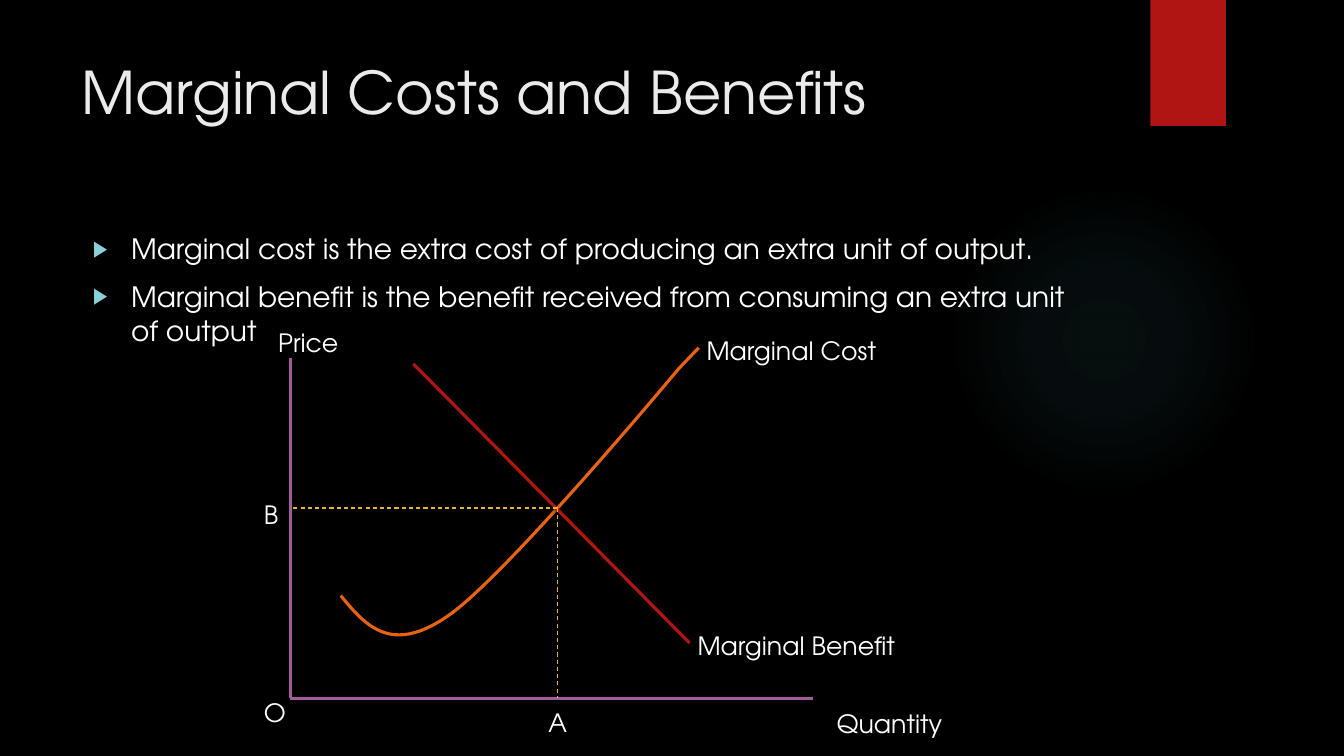
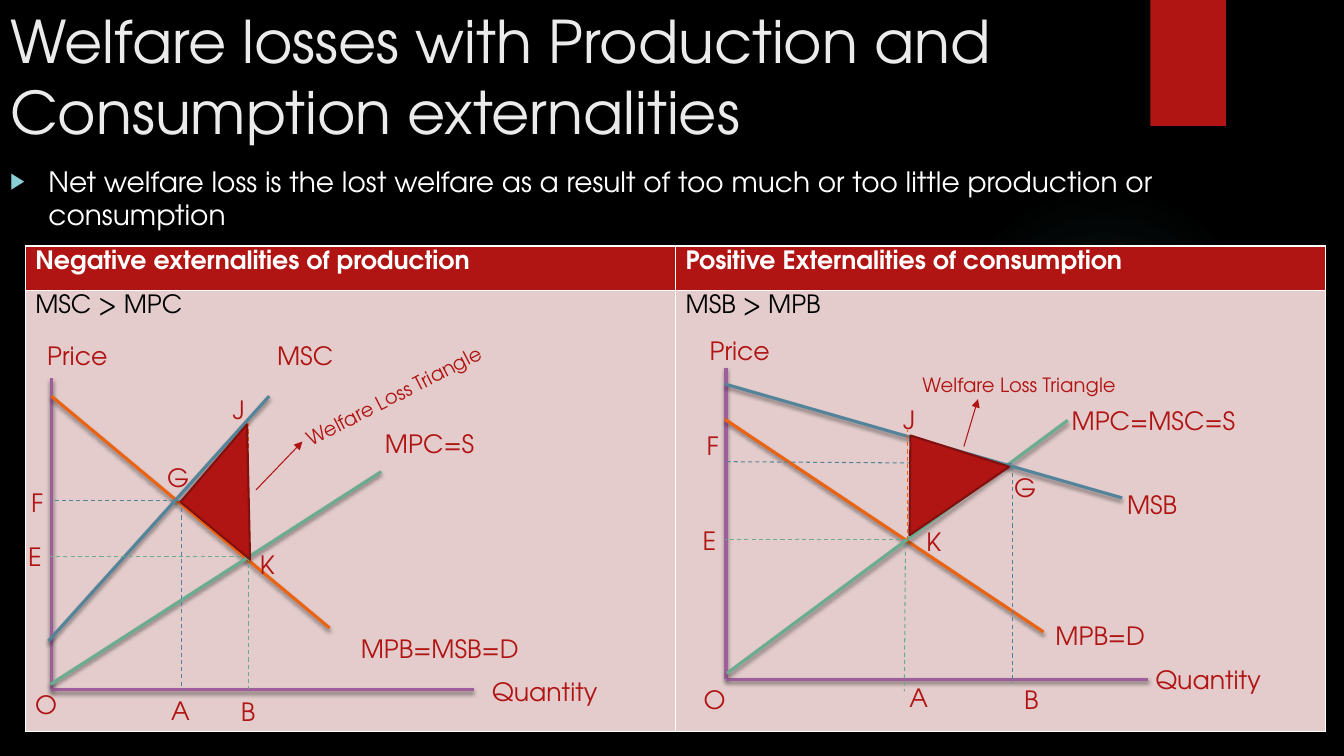
"""Build two slides on marginal analysis and the welfare losses of externalities."""
from math import comb

from pptx import Presentation
from pptx.dml.color import RGBColor
from pptx.enum import dml, shapes, text
from pptx.oxml import parse_xml
from pptx.oxml.ns import nsdecls
from pptx.util import Inches, Pt

FONT = "TeX Gyre Adventor"
C = {
    "black": "000000", "white": "FFFFFF", "title": "EBEBEB", "red": "B01513",
    "dark_red": "82100E", "pink": "E4CCCC", "purple": "9E5E9B", "orange": "EA6312",
    "yellow": "E6B729", "green": "6AAC90", "blue": "54849A", "aqua": "8AD0D6",
    "glow": "50B9C1",
}
NS = nsdecls("a")
SHADOW = (
    f'<a:effectLst {NS}><a:outerShdw blurRad="38100" dist="25400" dir="5400000" rotWithShape="0">'
    f'<a:srgbClr val="{C["black"]}"><a:alpha val="45000"/></a:srgbClr></a:outerShdw></a:effectLst>'
)
NO_EFFECT = f"<a:effectLst {NS}/>"
BULLET = (
    f'<a:buClr {NS}><a:srgbClr val="{C["aqua"]}"/></a:buClr>',
    f'<a:buSzPct {NS} val="80000"/>',
    f'<a:buFont {NS} typeface="Arial"/>',
    f'<a:buChar {NS} char="▶"/>',
)


def style(p, size, color, bold=False):
    for r in p.runs:
        r.font.name = FONT
        r.font.size = Pt(size)
        r.font.bold = bold
        r.font.color.rgb = RGBColor.from_string(C[color])


def add_line(s, x1, y1, x2, y2, color, kind="solid"):
    ends = [Inches(v) for v in (x1, y1, x2, y2)]
    ln = s.shapes.add_connector(shapes.MSO_CONNECTOR.STRAIGHT, *ends)
    ln.line.color.rgb = RGBColor.from_string(C[color])
    ln.line.width = Pt(2.25 if kind == "solid" else 0.75)
    if kind == "dash":
        ln.line.dash_style = dml.MSO_LINE.DASH
    if kind == "arrow":
        ln.line._get_or_add_ln().append(parse_xml(f'<a:tailEnd {NS} type="triangle"/>'))
    ln.element.spPr.append(parse_xml(SHADOW if kind == "solid" else NO_EFFECT))


prs = Presentation()
prs.slide_width, prs.slide_height = Inches(13.33), Inches(7.5)
layout = prs.slide_layouts[1]
layout.background.fill.solid()
layout.background.fill.fore_color.rgb = RGBColor.from_string(C["black"])

s1, s2 = prs.slides.add_slide(layout), prs.slides.add_slide(layout)

glow = s1.shapes.add_shape(shapes.MSO_SHAPE.OVAL, Inches(9.41), Inches(1.83), Inches(3.08), Inches(3.08))
band = s1.shapes.add_shape(shapes.MSO_SHAPE.RECTANGLE, Inches(11.41), 0, Inches(0.75), Inches(1.25))
for sp in (glow, band):
    sp.line.fill.background()
    sp.fill.solid()
    sp.fill.fore_color.rgb = RGBColor.from_string(C["red"])
stops = "".join(
    f'<a:gs pos="{pos}000"><a:srgbClr val="{C["glow"]}"><a:alpha val="{alpha}000"/></a:srgbClr></a:gs>'
    for pos, alpha in ((0, 7), (36, 6), (69, 0))
)
solid = glow.element.spPr.find("{*}solidFill")
glow.element.spPr.replace(solid, parse_xml(
    f'<a:gradFill {NS}><a:gsLst>{stops}</a:gsLst><a:path path="circle">'
    '<a:fillToRect l="50000" t="50000" r="50000" b="50000"/></a:path></a:gradFill>'))
glow.shadow.inherit = False
band.element.spPr.append(parse_xml(SHADOW))
for i, sp in enumerate((glow, band)):
    layout.shapes.element.insert(2 + i, sp.element)

contents = (
    (s1, "Marginal Costs and Benefits", (0.71, 0.5, 10.29, 1.53), (0.82, 2.25, 10.18, 5.25),
     ("Marginal cost is the extra cost of producing an extra unit of output.",
      "Marginal benefit is the benefit received from consuming an extra unit of output")),
    (s2, "Welfare losses with Production and Consumption externalities",
     (0, 0, 13.33, 1.5), (0, 1.58, 13.33, 5.25),
     ("Net welfare loss is the lost welfare as a result of too much or too little production or consumption",)),
)
for s, heading, title_box, body_box, bullets in contents:
    title, body = s.shapes.title, s.placeholders[1]
    for sp, box in ((title, title_box), (body, body_box)):
        sp.left, sp.top, sp.width, sp.height = [Inches(v) for v in box]
        sp.text_frame.word_wrap = True
        sp.text_frame.auto_size = text.MSO_AUTO_SIZE.NONE
        sp.text_frame.vertical_anchor = text.MSO_ANCHOR.TOP
    title.text_frame.text = heading
    title.text_frame.paragraphs[0].alignment = text.PP_ALIGN.LEFT
    style(title.text_frame.paragraphs[0], 42, "title")
    body.text_frame.text = "\n".join(bullets)
    for i, p in enumerate(body.text_frame.paragraphs):
        pPr = p._p.get_or_add_pPr()
        pPr.set("marL", str(Inches(0.38)))
        pPr.set("indent", str(-Inches(0.38)))
        for xml in BULLET:
            pPr.append(parse_xml(xml))
        p.space_before = Pt(10 if i else 0)
        style(p, 20, "white")

add_line(s1, 2.88, 3.55, 2.88, 6.92, "purple")
add_line(s1, 2.88, 6.93, 8.06, 6.93, "purple")
beziers = (
    ((3.38, 5.91), (3.62, 6.2), (3.87, 6.5), (4.43, 6.12)),
    ((4.43, 6.12), (4.99, 5.75), (6.73, 3.66), (6.73, 3.66)),
)
steps = 24
curve = [
    [Inches(sum(comb(3, k) * (1 - t) ** (3 - k) * t ** k * pt[axis] for k, pt in enumerate(bezier)))
     for axis in (0, 1)]
    for bezier in beziers for t in (i / steps for i in range(steps + 1))
]
curve.append([Inches(6.93), Inches(3.45)])
fb = s1.shapes.build_freeform(*curve[0])
fb.add_line_segments(curve[1:], close=False)
cost = fb.convert_to_shape()
cost.fill.background()
cost.line.color.rgb = RGBColor.from_string(C["orange"])
cost.line.width = Pt(2.25)
cost.element.spPr.append(parse_xml(SHADOW))
add_line(s1, 4.1, 3.61, 6.84, 6.38, "red")
add_line(s1, 5.53, 5.04, 2.88, 5.04, "yellow", "dash")
add_line(s1, 5.53, 5.04, 5.53, 6.92, "yellow", "dash")

tbl = s2.shapes.add_table(2, 2, Inches(0.25), Inches(2.44), Inches(12.9), Inches(4.82)).table
tbl.rows[0].height, tbl.rows[1].height = Inches(0.44), Inches(4.38)
rows = (
    ("Negative externalities of production", "Positive Externalities of consumption"),
    ("MSC > MPC", "MSB > MPB"),
)
for i, row in enumerate(rows):
    for j, words in enumerate(row):
        cell = tbl.cell(i, j)
        cell.text_frame.text = words
        cell.fill.solid()
        cell.fill.fore_color.rgb = RGBColor.from_string(C["pink" if i else "red"])
        style(cell.text_frame.paragraphs[0], 18, "black" if i else "white", bold=i == 0)

for x, y in ((0.51, 6.84), (7.2, 6.74)):
    add_line(s2, x, y - 3.09, x, y, "purple")
    add_line(s2, x, y, x + 4.19, y, "purple")
graph_lines = (
    (0.51, 3.93, 3.27, 6.23, "orange"),
    (0.5, 6.79, 3.78, 4.68, "green"),
    (0.48, 6.36, 2.67, 3.93, "blue"),
    (2.46, 5.52, 0.5, 5.52, "green", "dash"),
    (2.46, 5.52, 2.46, 6.84, "green", "dash"),
    (1.8, 4.97, 0.5, 4.97, "blue", "dash"),
    (1.8, 4.97, 1.8, 6.84, "blue", "dash"),
    (2.46, 5.52, 2.46, 4.2, "orange", "dash"),
    (7.19, 4.16, 10.35, 6.27, "orange"),
    (7.21, 6.68, 10.59, 4.17, "green"),
    (7.19, 3.81, 11.13, 4.94, "blue"),
    (9, 5.35, 7.19, 5.35, "green", "dash"),
    (8.98, 5.4, 8.97, 6.86, "green", "dash"),
    (10.04, 4.6, 7.19, 4.58, "blue", "dash"),
    (10.04, 4.62, 10.04, 6.77, "blue", "dash"),
    (9, 5.36, 9, 4.27, "orange", "dash"),
)
for graph_line in graph_lines:
    add_line(s2, *graph_line)

triangles = (
    ((2.48, 5.55), (1.79, 4.98), (2.45, 4.21)),
    ((9.02, 5.31), (9.03, 4.32), (10.01, 4.63)),
)
for corners in triangles:
    start, *rest = [(Inches(x), Inches(y)) for x, y in corners]
    fb = s2.shapes.build_freeform(*start)
    fb.add_line_segments(rest, close=True)
    loss = fb.convert_to_shape()
    loss.shadow.inherit = False
    loss.fill.solid()
    loss.fill.fore_color.rgb = RGBColor.from_string(C["red"])
    loss.line.color.rgb = RGBColor.from_string(C["dark_red"])
    loss.line.width = Pt(1.5)
add_line(s2, 2.54, 4.86, 3, 4.38, "red", "arrow")
add_line(s2, 9.56, 4.43, 9.7, 3.96, "red", "arrow")

cost_labels = (
    ("Price", 2.66, 3.2, 1.62), ("Quantity", 8.2, 6.98, 1.92), ("O", 2.52, 6.87, 0.4),
    ("Marginal Cost", 6.91, 3.28, 2.2), ("Marginal Benefit", 6.82, 6.2, 2.49),
    ("B", 2.52, 4.9, 0.4), ("A", 5.34, 6.97, 0.56),
)
welfare_labels = (
    ("Price", 0.37, 3.33, 1.12), ("Quantity", 4.78, 6.66, 1.71), ("O", 0.25, 6.79, 0.49),
    ("MPB=MSB=D", 3.48, 6.23, 1.95), ("MPC=S", 3.72, 4.2, 1.66), ("MSC", 2.65, 3.33, 1.66),
    ("E", 0.18, 5.32, 0.4), ("F", 0.21, 4.79, 0.49), ("B", 2.29, 6.86, 0.49),
    ("A", 1.6, 6.85, 0.4), ("K", 2.48, 5.4, 0.53), ("G", 1.56, 4.54, 0.42), ("J", 2.21, 3.86, 0.4),
    ("Price", 6.94, 3.28, 1.12), ("Quantity", 11.36, 6.54, 1.71), ("O", 6.88, 6.74, 0.49),
    ("MPB=D", 10.37, 6.1, 1.95), ("MPC=MSC=S", 10.53, 3.97, 1.95), ("MSB", 11.08, 4.81, 1.66),
    ("E", 6.87, 5.16, 0.4), ("F", 6.91, 4.22, 0.49), ("B", 10.06, 6.74, 0.49),
    ("A", 8.92, 6.72, 0.4), ("K", 9.09, 5.17, 0.53), ("G", 9.96, 4.64, 0.42), ("J", 8.86, 3.96, 0.4),
)
triangle_labels = (
    ("Welfare Loss Triangle", 2.85, 3.75, 2.14, 332.7),
    ("Welfare Loss Triangle", 9.05, 3.65, 2.14, 0),
)
label_sets = (
    (s1, "white", 18, 0.4, cost_labels),
    (s2, "red", 18, 0.4, welfare_labels),
    (s2, "red", 14, 0.34, triangle_labels),
)
for s, color, size, height, labels in label_sets:
    for words, x, y, width, *turn in labels:
        tb = s.shapes.add_textbox(Inches(x), Inches(y), Inches(width), Inches(height))
        tb.rotation = turn[0] if turn else 0
        tf = tb.text_frame
        tf.word_wrap = True
        tf.text = words
        style(tf.paragraphs[0], size, color)

prs.save("out.pptx")
